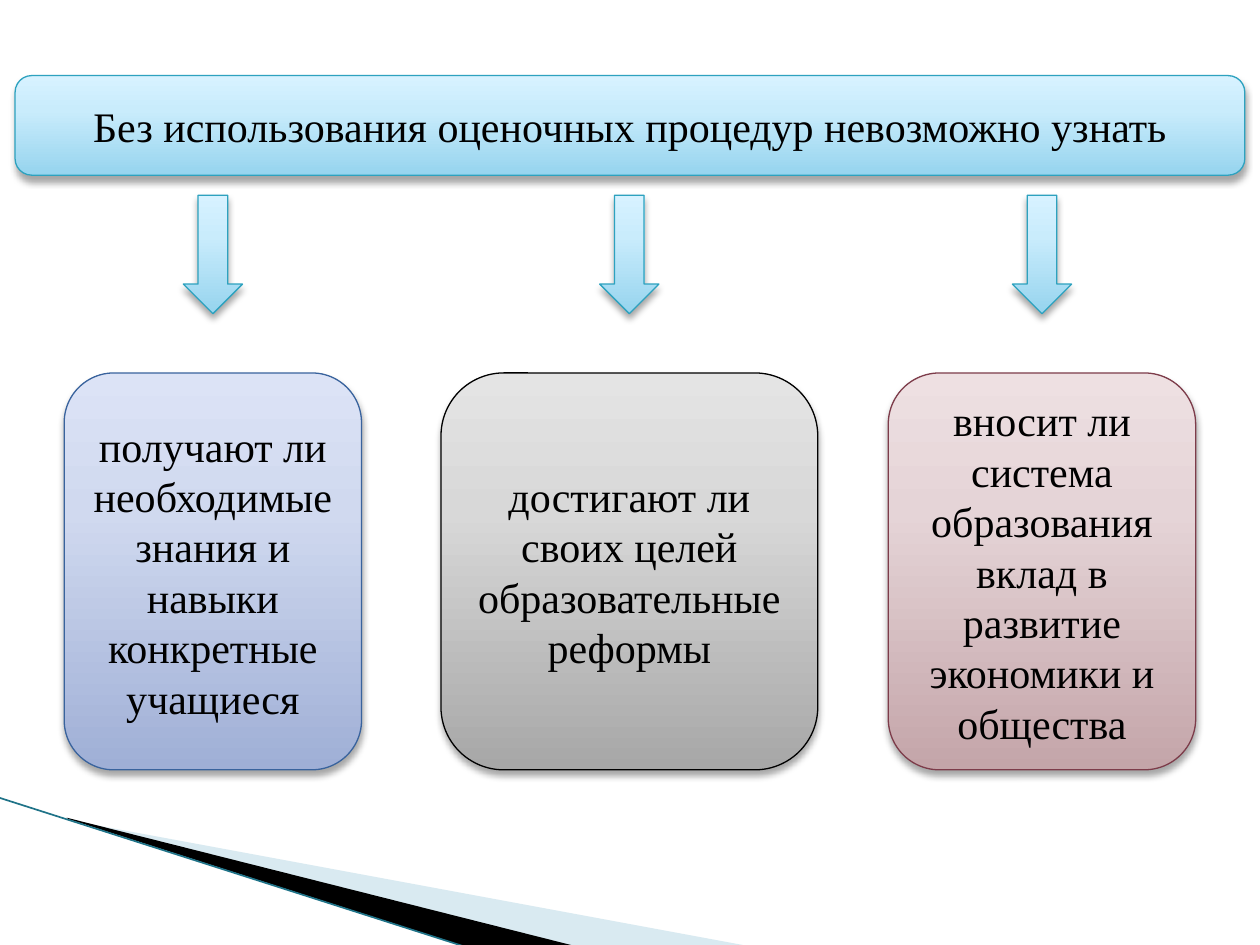
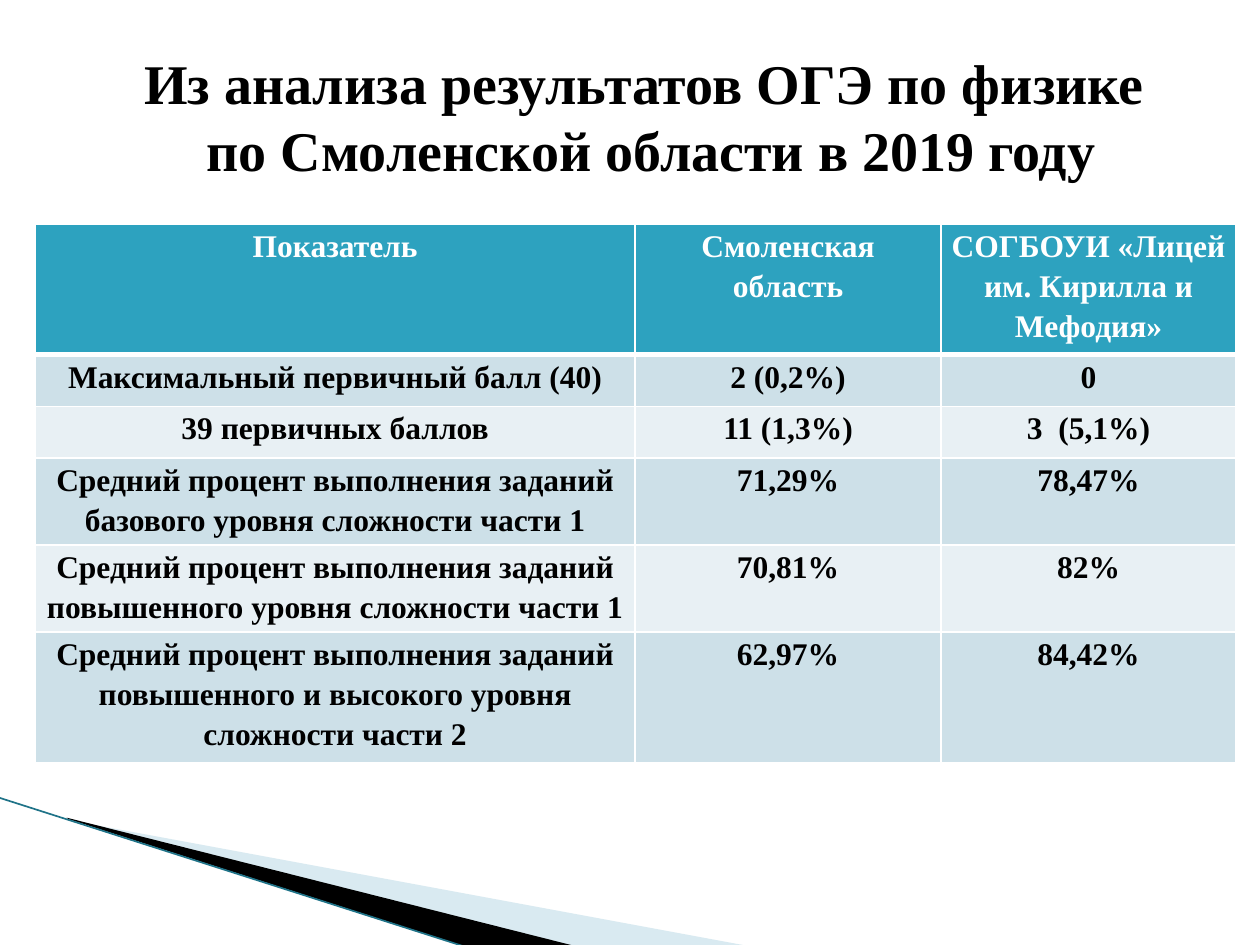
from pptx import Presentation
from pptx.dml.color import RGBColor
from pptx.enum.shapes import MSO_CONNECTOR, MSO_SHAPE as SHAPE
from pptx.enum.text import MSO_ANCHOR, PP_ALIGN
from pptx.oxml import parse_xml
from pptx.oxml.ns import nsdecls, qn
from pptx.util import Inches, Pt

FONT = "Times New Roman"
COLORS = {
    "black": "000000", "white": "FFFFFF", "swoosh": "A0CBDC", "swoosh_line": "1F7388",
    "header": "2DA2BF", "band_dark": "CDE0E8", "band_light": "E8F0F4",
}
# Border colour, then gradient stops from bottom to top
STYLES = {
    "cyan": ("2DA2BF", ("96D4EE", "C9ECFC", "D7F2FF")),
    "blue": ("39639D", ("9FAFD6", "D0D9EF", "DCE3F6")),
    "gray": ("000000", ("A7A7A7", "D8D8D8", "E4E4E4")),
    "rose": ("7D3C4A", ("C4A5A9", "E5D4D7", "EEE0E2")),
}
STOPS = (0, 65, 100)

HEADING = "Без использования оценочных процедур невозможно узнать"
# Left, width, style, text
QUESTIONS = [
    (0.51, 2.36, "blue", "получают ли необходимые знания и навыки конкретные учащиеся"),
    (3.5, 2.99, "gray", "достигают ли своих целей образовательные реформы"),
    (7.05, 2.44, "rose",
     "вносит ли система образования вклад в развитие экономики и общества"),
]
TITLE = "Из анализа результатов ОГЭ по физике \vпо Смоленской области в 2019 году"
RESULTS = [
    ("Показатель", "Смоленская область", "СОГБОУИ «Лицей им. Кирилла и Мефодия»"),
    ("Максимальный первичный балл (40)", "2 (0,2%)", "0"),
    ("39 первичных баллов", "11 (1,3%)", "3  (5,1%)"),
    ("Средний процент выполнения заданий базового уровня сложности части 1",
     "71,29%", "78,47%"),
    ("Средний процент выполнения заданий повышенного уровня сложности части 1",
     "70,81%", "82%"),
    ("Средний процент выполнения заданий повышенного и высокого уровня сложности части 2",
     "62,97%", "84,42%"),
]
COL_WIDTHS = (4.76, 2.43, 2.34)
ROW_HEIGHTS = (1.03, 0.41, 0.41, 0.64, 0.64, 0.95)


def rgb(name):
    return RGBColor.from_string(COLORS[name])


def write(tf, text, size, color="black", bold=False):
    """Put one centred paragraph into a text frame."""
    tf.word_wrap = True
    p = tf.paragraphs[0]
    p.text = text
    p.alignment = PP_ALIGN.CENTER
    p.font.name, p.font.size, p.font.bold = FONT, Pt(size), bold
    p.font.color.rgb = rgb(color)
    return p


def add_glossy(slide, kind, box, style, text=None):
    """Add a shape with a vertical gradient and a soft shadow below it."""
    border, shades = STYLES[style]
    s = slide.shapes.add_shape(kind, *map(Inches, box))
    s.line.color.rgb = RGBColor.from_string(border)
    s.line.width = Pt(0.75)
    s.fill.gradient()
    stops = "".join(f'<a:gs pos="{pos * 1000}"><a:srgbClr val="{shade}"/></a:gs>'
                    for pos, shade in zip(STOPS, shades))
    sp_pr = s._element.spPr
    sp_pr.replace(sp_pr.find(qn("a:gradFill")), parse_xml(
        f'<a:gradFill {nsdecls("a")} rotWithShape="1"><a:gsLst>{stops}</a:gsLst>'
        '<a:lin ang="16200000" scaled="0"/></a:gradFill>'))
    s.shadow.inherit = False
    sp_pr.find(qn("a:effectLst")).append(parse_xml(
        f'<a:outerShdw {nsdecls("a")} blurRad="{Pt(4)}" dist="{Pt(3)}" dir="5400000" '
        'rotWithShape="0"><a:srgbClr val="000000"><a:alpha val="35000"/></a:srgbClr>'
        '</a:outerShdw>'))
    if text:
        s.text_frame.vertical_anchor = MSO_ANCHOR.MIDDLE
        write(s.text_frame, text, 24)


def add_wedge(slide, points, color, alpha=None):
    start, *rest = [(Inches(x), Inches(y)) for x, y in points]
    builder = slide.shapes.build_freeform(*start)
    builder.add_line_segments(rest)
    s = builder.convert_to_shape()
    s.shadow.inherit = False
    s.line.fill.background()
    s.fill.solid()
    s.fill.fore_color.rgb = rgb(color)
    if alpha:
        s._element.spPr.find(".//" + qn("a:srgbClr")).append(
            parse_xml(f'<a:alpha {nsdecls("a")} val="{alpha * 1000}"/>'))


def add_swoosh(slide):
    """Draw the corner decoration that every slide shares."""
    add_wedge(slide, [(0.55, 6.51), (5.95, 7.51), (4.56, 7.51), (0.55, 6.5)], "swoosh", 40)
    add_wedge(slide, [(0.53, 6.49), (4.57, 7.51), (3.72, 7.52), (0.54, 6.5)], "black")
    edge = slide.shapes.add_connector(
        MSO_CONNECTOR.STRAIGHT, *map(Inches, (-0.01, 6.33, 3.71, 7.52)))
    edge.line.color.rgb = rgb("swoosh_line")
    edge.line.width = Pt(0.95)
    edge._element.spPr.append(parse_xml(f'<a:effectLst {nsdecls("a")}/>'))


def new_slide(prs):
    slide = prs.slides.add_slide(prs.slide_layouts[6])
    add_swoosh(slide)
    return slide


def add_questions(slide, top, arrow_top):
    """Place each question box, with an arrow above its middle."""
    arrow_w, arrow_h = 0.47, 0.94
    for left, width, style, text in QUESTIONS:
        arrow_left = left + (width - arrow_w) / 2
        add_glossy(slide, SHAPE.DOWN_ARROW, (arrow_left, arrow_top, arrow_w, arrow_h), "cyan")
        add_glossy(slide, SHAPE.ROUNDED_RECTANGLE, (left, top, width, 3.15), style, text)


def add_title(slide, box):
    tf = slide.shapes.add_textbox(*map(Inches, box)).text_frame
    tf.vertical_anchor = MSO_ANCHOR.MIDDLE
    write(tf, TITLE, 32, bold=True)


def set_borders(cell, top, bottom):
    """Draw white cell borders; top and bottom are widths in points."""
    sides = (("L", 1), ("R", 1), ("T", top), ("B", bottom))
    for i, (side, width) in enumerate(sides):
        cell._tc.get_or_add_tcPr().insert(i, parse_xml(
            f'<a:ln{side} {nsdecls("a")} w="{Pt(width)}"><a:solidFill>'
            f'<a:srgbClr val="{COLORS["white"]}"/></a:solidFill></a:ln{side}>'))


def add_results(slide, left, top):
    table = slide.shapes.add_table(
        len(RESULTS), len(COL_WIDTHS), Inches(left), Inches(top),
        Inches(sum(COL_WIDTHS)), Inches(sum(ROW_HEIGHTS))).table
    for col, width in zip(table.columns, COL_WIDTHS):
        col.width = Inches(width)
    for i, (values, height) in enumerate(zip(RESULTS, ROW_HEIGHTS)):
        table.rows[i].height = Inches(height)
        fill = "header" if i == 0 else "band_dark" if i % 2 else "band_light"
        for j, value in enumerate(values):
            cell = table.cell(i, j)
            cell.margin_left = cell.margin_right = Inches(0.07)
            cell.margin_top = cell.margin_bottom = 0
            cell.fill.solid()
            cell.fill.fore_color.rgb = rgb(fill)
            p = write(cell.text_frame, value, 18, "black" if i else "white", bold=True)
            p.line_spacing = 1.15
            set_borders(cell, top=3 if i == 1 else 1, bottom=3 if i == 0 else 1)


def build_questions_slide(prs):
    slide = new_slide(prs)
    add_glossy(slide, SHAPE.ROUNDED_RECTANGLE, (0.12, 0.6, 9.76, 0.79), "cyan", HEADING)
    add_questions(slide, top=2.96, arrow_top=1.55)


def build_results_slide(prs):
    slide = new_slide(prs)
    add_title(slide, (0.67, 0.29, 9, 1.25))
    add_results(slide, left=0.28, top=1.78)


def main():
    prs = Presentation()
    prs.slide_width, prs.slide_height = Inches(10), Inches(7.5)
    build_questions_slide(prs)
    build_results_slide(prs)
    prs.save("out.pptx")


if __name__ == "__main__":
    main()
